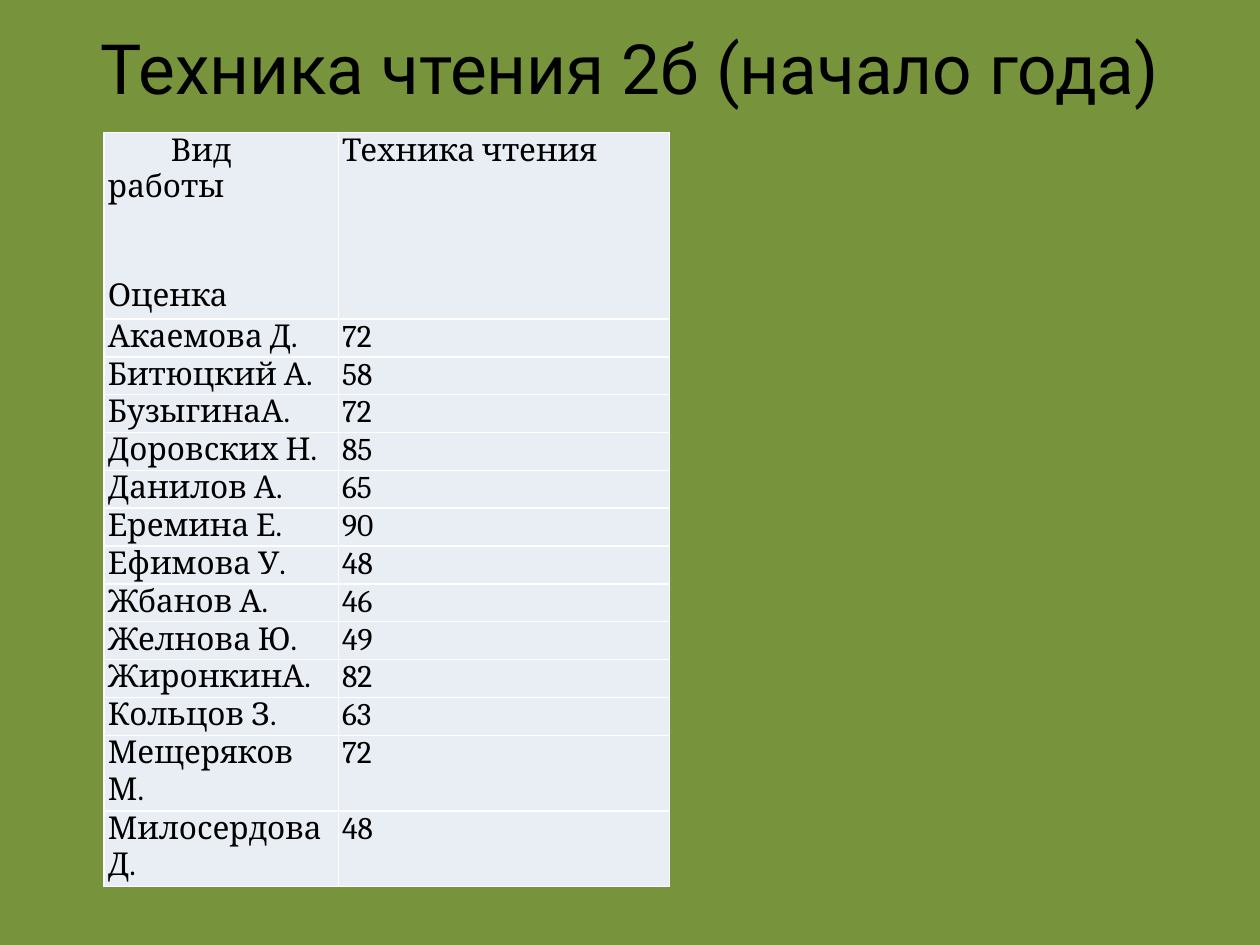
from lxml.etree import SubElement
from pptx import Presentation
from pptx.dml.color import RGBColor
from pptx.enum.text import MSO_ANCHOR, PP_ALIGN
from pptx.oxml.ns import qn
from pptx.util import Pt

LINE = 20.8
READERS = [
    ("Акаемова Д.", 72),
    ("Битюцкий А.", 58),
    ("БузыгинаА.", 72),
    ("Доровских Н.", 85),
    ("Данилов А.", 65),
    ("Еремина Е.", 90),
    ("Ефимова У.", 48),
    ("Жбанов А.", 46),
    ("Желнова Ю.", 49),
    ("ЖиронкинА.", 82),
    ("Кольцов З.", 63),
    ("Мещеряков М.", 72),
    ("Милосердова Д.", 48),
]
WRAPPED = {"Мещеряков М.", "Милосердова Д."}


def color(hex_value):
    """Turn a hex string into a colour."""
    return RGBColor.from_string(hex_value)


def paint(fill, hex_value):
    """Make a fill solid in the given colour."""
    fill.solid()
    fill.fore_color.rgb = color(hex_value)


def write(paragraph, text, font="Cambria", size=18, ink="000000",
          align=PP_ALIGN.LEFT, before=0, indent=0):
    """Put formatted text into a paragraph."""
    run = paragraph.add_run()
    run.text = text
    run.font.name = font
    run.font.size = Pt(size)
    run.font.color.rgb = color(ink)
    paragraph.alignment = align
    paragraph.space_before = Pt(before)
    if indent:
        paragraph._p.get_or_add_pPr().set("indent", str(Pt(indent)))


def add_title(slide, text):
    """Add the centred heading."""
    frame = slide.shapes.add_textbox(Pt(36), Pt(21.6), Pt(648), Pt(33)).text_frame
    frame.word_wrap = True
    frame.vertical_anchor = MSO_ANCHOR.MIDDLE
    frame.margin_top = frame.margin_bottom = 0
    write(frame.paragraphs[0], text, font="Roboto", size=39.6, align=PP_ALIGN.CENTER)


def style_cell(cell, background="E9EDF4", border="FFFFFF"):
    """Set the margins, borders and fill of a cell."""
    cell.margin_left = cell.margin_right = Pt(2.2)
    cell.margin_top = cell.margin_bottom = 0
    properties = cell._tc.get_or_add_tcPr()
    for side in ("a:lnL", "a:lnR", "a:lnT", "a:lnB"):
        edge = SubElement(properties, qn(side), w=str(Pt(1)))
        SubElement(SubElement(edge, qn("a:solidFill")), qn("a:srgbClr"), val=border)
    paint(cell.fill, background)


def add_scores(slide):
    """Add the table of reading scores."""
    heights = [5 * LINE] + [LINE * (2 if name in WRAPPED else 1) for name, _ in READERS]
    widths = [133.8, 189.4]
    table = slide.shapes.add_table(len(heights), len(widths), Pt(59.5), Pt(75.8),
                                   Pt(sum(widths)), Pt(sum(heights))).table
    table.first_row = table.horz_banding = False
    for column, width in zip(table.columns, widths):
        column.width = Pt(width)
    for row, height in zip(table.rows, heights):
        row.height = Pt(height)
    for cell in table.iter_cells():
        style_cell(cell)

    corner = table.cell(0, 0).text_frame
    write(corner.paragraphs[0], "Вид работы", indent=36)
    write(corner.add_paragraph(), "Оценка", before=2 * LINE)
    write(table.cell(0, 1).text_frame.paragraphs[0], "Техника чтения")
    for row, reader in enumerate(READERS, start=1):
        for column, value in enumerate(reader):
            write(table.cell(row, column).text_frame.paragraphs[0], str(value))


def main():
    """Build and save the slide."""
    deck = Presentation()
    deck.slide_width, deck.slide_height = Pt(720), Pt(540)
    slide = deck.slides.add_slide(deck.slide_layouts[6])
    paint(slide.background.fill, "77933C")
    add_title(slide, "Техника чтения 2б (начало года)")
    add_scores(slide)
    deck.save("out.pptx")


if __name__ == "__main__":
    main()
